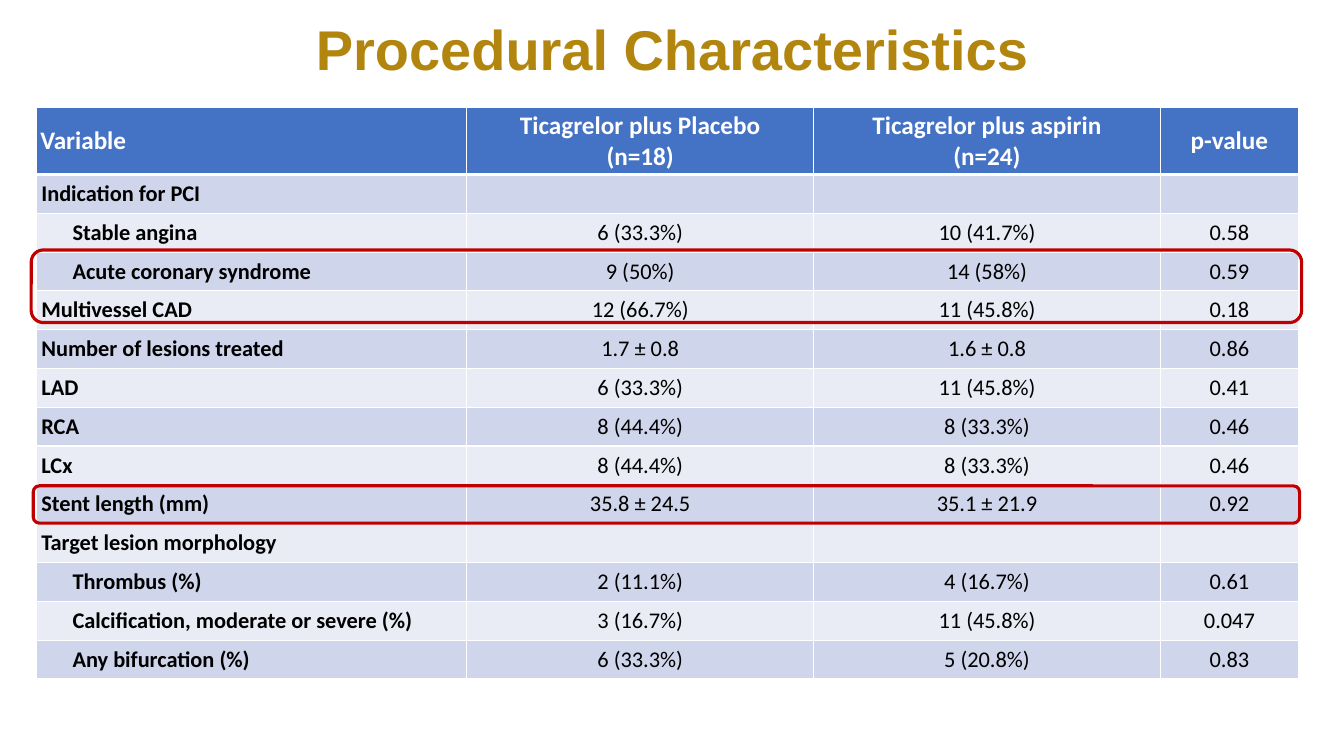
"""Build the procedural characteristics slide with its comparison table."""
from lxml import etree
from pptx import Presentation
from pptx.dml.color import RGBColor
from pptx.enum import shapes, text
from pptx.oxml import ns
from pptx.util import Inches, Pt

TITLE = "Procedural Characteristics"
HEADER = ("Variable", "Ticagrelor plus Placebo\n(n=18)",
          "Ticagrelor plus aspirin\n(n=24)", "p-value")
ROWS = [
    ("Indication for PCI", "", "", ""),
    ("Stable angina", "6 (33.3%)", "10 (41.7%)", "0.58"),
    ("Acute coronary syndrome", "9 (50%)", "14 (58%)", "0.59"),
    ("Multivessel CAD", "12 (66.7%)", "11 (45.8%)", "0.18"),
    ("Number of lesions treated", "1.7 ± 0.8", "1.6 ± 0.8", "0.86"),
    ("LAD", "6 (33.3%)", "11 (45.8%)", "0.41"),
    ("RCA", "8 (44.4%)", "8 (33.3%)", "0.46"),
    ("LCx", "8 (44.4%)", "8 (33.3%)", "0.46"),
    ("Stent length (mm)", "35.8 ± 24.5", "35.1 ± 21.9", "0.92"),
    ("Target lesion morphology", "", "", ""),
    ("Thrombus (%)", "2 (11.1%)", "4 (16.7%)", "0.61"),
    ("Calcification, moderate or severe (%)", "3 (16.7%)", "11 (45.8%)", "0.047"),
    ("Any bifurcation (%)", "6 (33.3%)", "5 (20.8%)", "0.83"),
]
INDENTED = {"Stable angina", "Acute coronary syndrome", "Thrombus (%)",
            "Calcification, moderate or severe (%)", "Any bifurcation (%)"}
HIGHLIGHTS = [(0.31, 2.48, 12.6, 0.72), (0.33, 4.82, 12.56, 0.37)]

TABLE_BOX = (0.36, 1.07, 12.52, 5.67)
COLUMN_WIDTHS = (4.27, 3.44, 3.44, 1.37)
HEADER_HEIGHT = 0.66
THEME = {
    "title_font": "Arial", "table_font": "Calibri",
    "title_size": 40, "header_size": 18, "body_size": 16,
    "title": "B2860E", "header": "4472C4", "bands": ("CFD5EA", "E9EBF5"),
    "header_text": "FFFFFF", "body_text": "000000",
    "border": "FFFFFF", "highlight": "C00000",
}


def set_font(font, name, size, color, bold):
    font.name, font.size, font.bold = name, Pt(size), bold
    font.color.rgb = RGBColor.from_string(color)


def add_title(slide):
    sp = slide.shapes.title
    sp.left, sp.top, sp.width, sp.height = map(Inches, (0, 0.09, 13.33, 0.77))
    tf = sp.text_frame
    tf.text = TITLE
    tf.vertical_anchor = text.MSO_ANCHOR.TOP
    p = tf.paragraphs[0]
    p.alignment = text.PP_ALIGN.CENTER
    p.line_spacing = 1.0
    set_font(p.runs[0].font, THEME["title_font"], THEME["title_size"], THEME["title"], True)


def set_borders(cell, is_header):
    tc_pr = cell._tc.get_or_add_tcPr()
    for side in "LRTB":
        width = 3 if is_header and side == "B" else 1
        ln = etree.SubElement(tc_pr, ns.qn(f"a:ln{side}"), w=str(Pt(width)))
        fill = etree.SubElement(ln, ns.qn("a:solidFill"))
        etree.SubElement(fill, ns.qn("a:srgbClr"), val=THEME["border"])


def fill_cell(cell, value, row, col):
    is_header = row == 0
    set_borders(cell, is_header)
    cell.fill.solid()
    color = THEME["header"] if is_header else THEME["bands"][(row - 1) % 2]
    cell.fill.fore_color.rgb = RGBColor.from_string(color)
    cell.vertical_anchor = text.MSO_ANCHOR.MIDDLE
    side_margin = 0.04 if is_header else 0 if col == 3 else 0.05
    cell.margin_left = cell.margin_right = Inches(side_margin)
    cell.margin_top = cell.margin_bottom = 0
    cell.text_frame.text = value
    kind = "header" if is_header else "body"
    for p in cell.text_frame.paragraphs:
        p.alignment = text.PP_ALIGN.CENTER if col else text.PP_ALIGN.LEFT
        if value in INDENTED:
            p._p.get_or_add_pPr().set("marL", str(Inches(0.31)))
        for r in p.runs:
            set_font(r.font, THEME["table_font"], THEME[f"{kind}_size"],
                     THEME[f"{kind}_text"], is_header or col == 0)


def add_table(slide):
    records = [HEADER, *ROWS]
    table = slide.shapes.add_table(len(records), len(HEADER), *map(Inches, TABLE_BOX)).table
    for column, width in zip(table.columns, COLUMN_WIDTHS):
        column.width = Inches(width)
    body_height = (TABLE_BOX[3] - HEADER_HEIGHT) / len(ROWS)
    for i, record in enumerate(records):
        table.rows[i].height = Inches(body_height if i else HEADER_HEIGHT)
        for j, value in enumerate(record):
            fill_cell(table.cell(i, j), value, i, j)


def add_highlight(slide, box):
    sp = slide.shapes.add_shape(shapes.MSO_SHAPE.ROUNDED_RECTANGLE, *map(Inches, box))
    sp.shadow.inherit = False
    sp.fill.background()
    sp.line.color.rgb = RGBColor.from_string(THEME["highlight"])
    sp.line.width = Pt(2.25)


def main():
    prs = Presentation()
    prs.slide_width, prs.slide_height = Inches(13.33), Inches(7.5)
    slide = prs.slides.add_slide(prs.slide_layouts.get_by_name("Title Only"))
    add_title(slide)
    add_table(slide)
    for box in HIGHLIGHTS:
        add_highlight(slide, box)
    prs.save("out.pptx")


if __name__ == "__main__":
    main()
